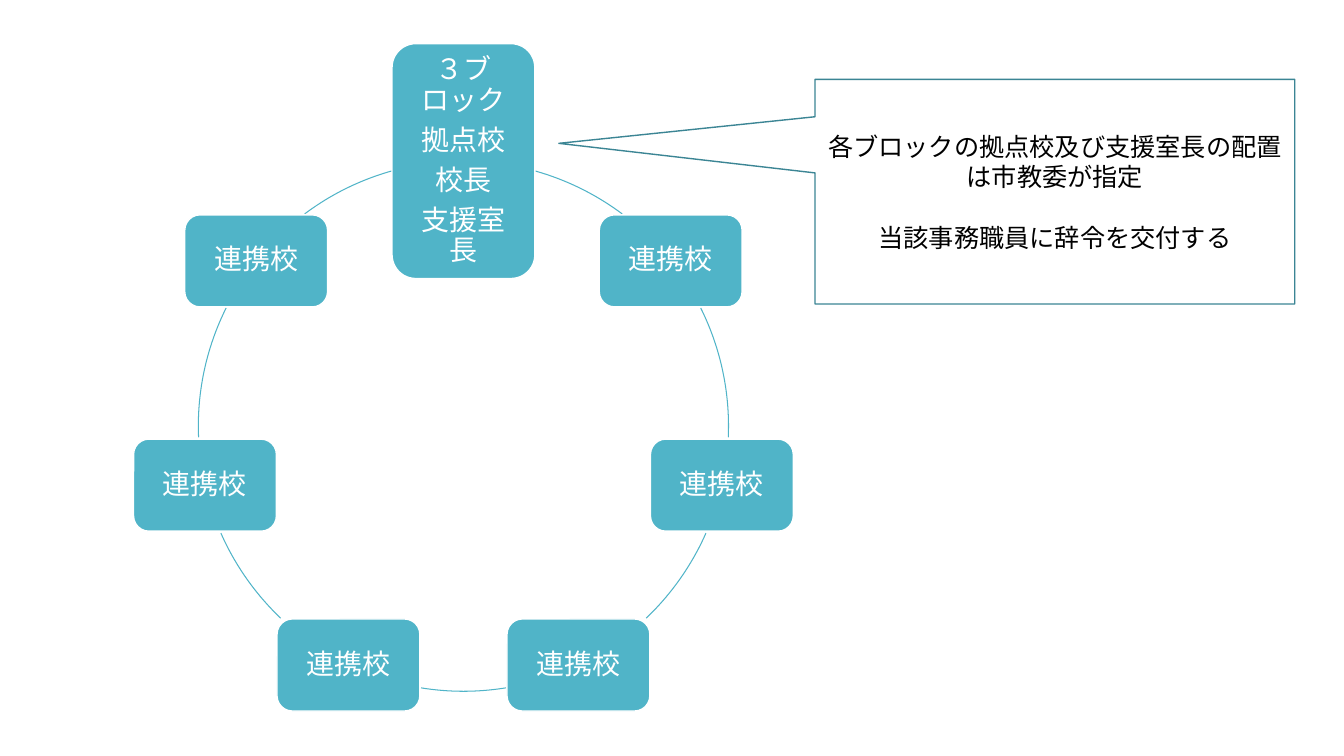
from dataclasses import dataclass
from math import cos, pi, sin

from pptx import Presentation
from pptx.dml.color import RGBColor
from pptx.enum.lang import MSO_LANGUAGE_ID
from pptx.enum.shapes import MSO_SHAPE
from pptx.enum.text import MSO_ANCHOR, PP_ALIGN
from pptx.util import Cm, Pt

ROUNDED, ARC = MSO_SHAPE.ROUNDED_RECTANGLE, MSO_SHAPE.ARC
CALLOUT = MSO_SHAPE.RECTANGULAR_CALLOUT
CENTER, MIDDLE = PP_ALIGN.CENTER, MSO_ANCHOR.MIDDLE
JAPANESE = MSO_LANGUAGE_ID.JAPANESE


@dataclass(frozen=True)
class Theme:
    font: str = "Calibri"
    teal: RGBColor = RGBColor(0x50, 0xB4, 0xC8)
    dark_teal: RGBColor = RGBColor(0x3B, 0x85, 0x94)
    white: RGBColor = RGBColor(0xFF, 0xFF, 0xFF)
    black: RGBColor = RGBColor(0, 0, 0)
    school_size: Pt = Pt(20)
    note_size: Pt = Pt(18)


THEME = Theme()
SCHOOL_TEXT = {"size": THEME.school_size, "color": THEME.white}
NOTE_TEXT = {"size": THEME.note_size, "color": THEME.black}
SCHOOL_PARAGRAPH = {"line_spacing": 0.9, "space_after": Pt(7)}

# Ring of schools, in centimetres
CENTER_X, CENTER_Y, RADIUS = 11.68, 10.74, 6.68
BOX_W, BOX_H, LEAD_H = 3.6, 2.32, 5.92
INSET = 0.22

LEAD_SCHOOL = ["３ブロック", "拠点校", "校長", "支援室長"]
SCHOOLS = [LEAD_SCHOOL] + [["連携校"]] * 6
NOTE = ["各ブロックの拠点校及び支援室長の配置は市教委が指定",
        "当該事務職員に辞令を交付する"]

# Visible arcs on the right half and at the bottom, in degrees clockwise from the top
RIGHT_ARCS = [(15.7, 36.8), (63.5, 92.4), (113.8, 136.4)]
BOTTOM_ARC = (170.8, 189.2)


def set_format(target, values):
    for name, value in values.items():
        setattr(target, name, value)


def add_outlined(s, kind, box, line_color, width, fill=None):
    sp = s.shapes.add_shape(kind, *(Cm(v) for v in box))
    sp.shadow.inherit = False
    if fill is None:
        sp.fill.background()
    else:
        sp.fill.solid()
        sp.fill.fore_color.rgb = fill
    sp.line.color.rgb = line_color
    sp.line.width = Pt(width)
    return sp


def write_text(sp, lines, text_format, paragraph_format):
    tf = sp.text_frame
    set_format(tf, {"word_wrap": True, "vertical_anchor": MIDDLE})
    for i, line in enumerate(lines):
        p = tf.add_paragraph() if i else tf.paragraphs[0]
        set_format(p, {"alignment": CENTER, **paragraph_format})
        r = p.add_run()
        r.text = line
        set_format(r.font, {"name": THEME.font, "size": text_format["size"],
                            "language_id": JAPANESE})
        r.font.color.rgb = text_format["color"]


def add_arc(s, start, end):
    """Draw part of the ring; angles run clockwise from the top."""
    box = (CENTER_X - RADIUS, CENTER_Y - RADIUS, 2 * RADIUS, 2 * RADIUS)
    sp = add_outlined(s, ARC, box, THEME.teal, 0.75)
    for i, angle in enumerate((start, end)):
        sp.adjustments[i] = (angle - 90) % 360 * 0.6  # 60000ths of a degree / 100000


def add_school(s, index, lines):
    angle = 2 * pi * index / len(SCHOOLS)
    height = BOX_H if index else LEAD_H
    box = (CENTER_X + RADIUS * sin(angle) - BOX_W / 2,
           CENTER_Y - RADIUS * cos(angle) - height / 2, BOX_W, height)
    sp = add_outlined(s, ROUNDED, box, THEME.white, 1, THEME.teal)
    sides = ("left", "top", "right", "bottom")
    set_format(sp.text_frame, {f"margin_{side}": Cm(INSET) for side in sides})
    write_text(sp, lines, SCHOOL_TEXT, SCHOOL_PARAGRAPH)


def add_note(s):
    sp = add_outlined(s, CALLOUT, (20.54, 2, 12.09, 5.66), THEME.dark_teal, 1, THEME.white)
    sp.adjustments[0], sp.adjustments[1] = -1.034, -0.215
    write_text(sp, NOTE, NOTE_TEXT, {})
    sp.text_frame.paragraphs[1].space_before = Pt(22)


def main():
    prs = Presentation()
    prs.slide_width, prs.slide_height = Cm(33.87), Cm(19.05)
    s = prs.slides.add_slide(prs.slide_layouts[6])
    left_arcs = [(360 - end, 360 - start) for start, end in RIGHT_ARCS]
    for start, end in RIGHT_ARCS + [BOTTOM_ARC] + left_arcs:
        add_arc(s, start, end)
    for index, lines in enumerate(SCHOOLS):
        add_school(s, index, lines)
    add_note(s)
    prs.save("out.pptx")


if __name__ == "__main__":
    main()
